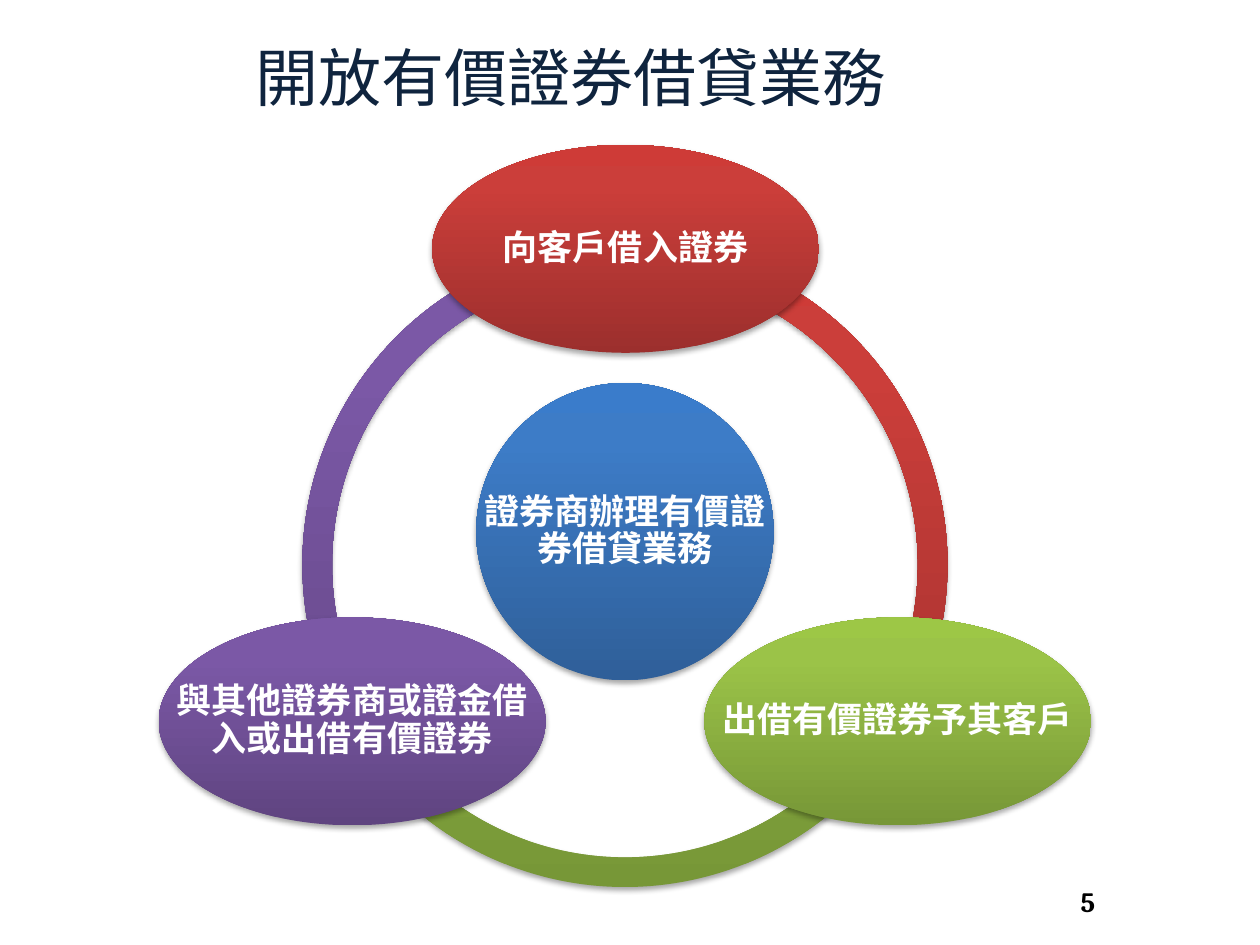
from dataclasses import dataclass

from lxml.etree import SubElement
from pptx import Presentation
from pptx.dml.color import RGBColor
from pptx.enum.shapes import MSO_SHAPE as Shape
from pptx.enum.text import MSO_ANCHOR as Anchor, PP_ALIGN as Align
from pptx.oxml.ns import qn
from pptx.util import Inches, Pt

COLORS = {"title": "0F243E", "number": "000000", "label": "FFFFFF", "shadow": "000000"}
GRADIENTS = {
    "blue": ("2F5F99", "3D7CC7", "3A7CCB"),
    "red": ("9C2F2D", "CB3E3A", "CE3B37"),
    "green": ("779737", "9BC348", "9DC746"),
    "purple": ("5F4480", "7B58A6", "7C57A8"),
}
STOPS = (0, 80000, 100000)
SANS, SERIF = "Noto Sans CJK SC", "Cambria"
RING_BOX = (2.4, 1.92, 5.12, 5.12)
RING_THICKNESS = 0.046
NODE_SIZE = (3.07, 1.65)


@dataclass
class Arc:
    gradient: str
    start: int
    end: int


@dataclass
class Node:
    text: str
    gradient: str
    left: float
    top: float
    width: float = NODE_SIZE[0]
    height: float = NODE_SIZE[1]

    @property
    def box(self) -> tuple:
        return self.left, self.top, self.width, self.height


ARCS = [Arc("purple", 150, 270), Arc("green", 30, 150), Arc("red", 270, 30)]
NODES = [
    Node("證券商辦理有價證券借貸業務", "blue", 3.78, 3.04, 2.36, 2.36),
    Node("向客戶借入證券", "red", 3.43, 1.15),
    Node("出借有價證券予其客戶", "green", 5.59, 4.9),
    Node("與其他證券商或證金借入或出借有價證券", "purple", 1.26, 4.9),
]


def add_color_stop(parent, color: str, **attributes: str):
    """Add an sRGB colour element, with its optional opacity, to parent."""
    element = SubElement(parent, qn("a:srgbClr"), val=color)
    for name, value in attributes.items():
        SubElement(element, qn(f"a:{name}"), val=value)


def add_shaded_shape(slide, kind: Shape, box: tuple, gradient: str):
    """Add a borderless shape with a vertical gradient and a soft shadow below."""
    shape = slide.shapes.add_shape(kind, *map(Inches, box))
    shape.fill.gradient()
    shape.fill.gradient_angle = 90
    shape.line.fill.background()
    shape.shadow.inherit = False
    properties = shape._element.spPr

    stop_list = properties.find(".//" + qn("a:gsLst"))
    for stop in list(stop_list):
        stop_list.remove(stop)
    for position, color in zip(STOPS, GRADIENTS[gradient]):
        add_color_stop(SubElement(stop_list, qn("a:gs"), pos=str(position)), color)

    shadow = SubElement(
        properties.find(qn("a:effectLst")), qn("a:outerShdw"),
        blurRad=str(Pt(3.1)), dist=str(Pt(1.8)), dir="5400000", rotWithShape="0",
    )
    add_color_stop(shadow, COLORS["shadow"], alpha="35000")
    return shape


def add_text(slide, text: str, box: tuple, color: str, font: dict,
             margin: float = 0.05, line_spacing: float = 1.0):
    frame = slide.shapes.add_textbox(*map(Inches, box)).text_frame
    frame_format = {"word_wrap": True, "vertical_anchor": Anchor.MIDDLE}
    for side in ("left", "right", "top", "bottom"):
        frame_format[f"margin_{side}"] = Inches(margin)
    for name, value in frame_format.items():
        setattr(frame, name, value)
    paragraph = frame.paragraphs[0]
    paragraph.alignment = Align.CENTER
    paragraph.line_spacing = line_spacing
    run = paragraph.add_run()
    run.text = text
    for name, value in font.items():
        setattr(run.font, name, value)
    run.font.color.rgb = RGBColor.from_string(COLORS[color])
    SubElement(run._r.get_or_add_rPr(), qn("a:ea"), typeface=SANS)


def add_arc(slide, arc: Arc):
    shape = add_shaded_shape(slide, Shape.BLOCK_ARC, RING_BOX, arc.gradient)
    # Angles are stored in 60000ths of a degree, adjustments in 100000ths.
    for index, value in enumerate((arc.start * 0.6, arc.end * 0.6, RING_THICKNESS)):
        shape.adjustments[index] = value


def add_node(slide, node: Node):
    add_shaded_shape(slide, Shape.OVAL, node.box, node.gradient)
    add_text(slide, node.text, node.box, "label",
             {"name": SANS, "size": Pt(20), "bold": True}, 0.03, 0.9)


def main():
    presentation = Presentation()
    presentation.slide_width, presentation.slide_height = Inches(10), Inches(7.5)
    slide = presentation.slides.add_slide(presentation.slide_layouts[6])
    add_text(slide, "開放有價證券借貸業務", (1.38, 0.21, 6.3, 0.79), "title",
             {"name": SERIF, "size": Pt(36)})
    add_text(slide, "5", (7.47, 6.95, 2.33, 0.4), "number",
             {"name": SERIF, "size": Pt(16), "bold": True})
    for arc in ARCS:
        add_arc(slide, arc)
    for node in NODES:
        add_node(slide, node)
    presentation.save("out.pptx")


if __name__ == "__main__":
    main()
